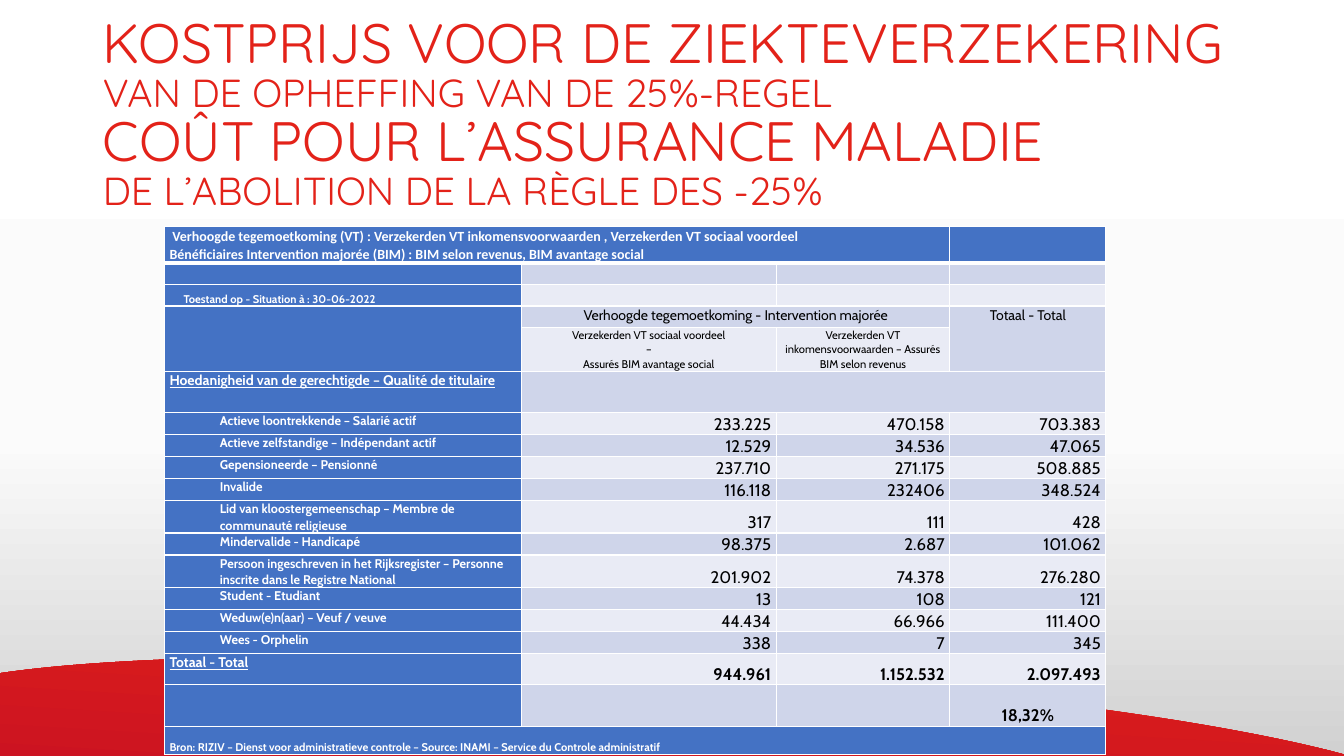
import pptx
import pptx.util
import pptx.dml.color
import pptx.enum.shapes
import pptx.enum.text
import pptx.oxml
import pptx.oxml.ns
from lxml import etree

Pt = pptx.util.Pt
qn = pptx.oxml.ns.qn
ALIGN = pptx.enum.text.PP_ALIGN
ANCHOR = pptx.enum.text.MSO_ANCHOR

HUES = {
    "red": "E32219", "wine": "BD0A26", "blue": "4472C4",
    "dark": "CFD5EA", "pale": "E9EBF5", "white": "FFFFFF",
    "mist": "FBFBFB", "grey": "D1D1D1", "black": "000000",
}

TITLE = [
    ("KOSTPRIJS VOOR DE ZIEKTEVERZEKERING", 39.6),
    ("VAN DE OPHEFFING VAN DE 25%-REGEL", 27.9),
    ("COÛT POUR L’ASSURANCE MALADIE", 39.6),
    ("DE L’ABOLITION DE LA RÈGLE DES -25%", 27.9),
]
HEAD = [
    "Verhoogde tegemoetkoming (VT) : Verzekerden VT inkomensvoorwaarden , Verzekerden VT sociaal voordeel",
    "Bénéficiaires Intervention majorée (BIM) : BIM selon revenus, BIM avantage social",
]
DATE = "Toestand op - Situation à : 30-06-2022"
GROUP = "Verhoogde tegemoetkoming - Intervention majorée"
SUM = "Totaal - Total"
SOCIAL = ["Verzekerden VT sociaal voordeel", "–", "Assurés BIM avantage social"]
INCOME = "Verzekerden VT inkomensvoorwaarden – Assurés BIM selon revenus"
STATUS = "Hoedanigheid van de gerechtigde – Qualité de titulaire"
HOLDERS = [
    ("Actieve loontrekkende – Salarié actif", "233.225", "470.158", "703.383"),
    ("Actieve zelfstandige – Indépendant actif", "12.529", "34.536", "47.065"),
    ("Gepensioneerde – Pensionné", "237.710", "271.175", "508.885"),
    ("Invalide", "116.118", "232406", "348.524"),
    ("Lid van kloostergemeenschap – Membre de communauté religieuse", "317", "111", "428"),
    ("Mindervalide - Handicapé", "98.375", "2.687", "101.062"),
    ("Persoon ingeschreven in het Rijksregister – Personne inscrite dans le Registre National",
     "201.902", "74.378", "276.280"),
    ("Student - Etudiant", "13", "108", "121"),
    ("Weduw(e)n(aar) – Veuf / veuve", "44.434", "66.966", "111.400"),
    ("Wees - Orphelin", "338", "7", "345"),
]
TOTALS = ("944.961", "1.152.532", "2.097.493")
SHARE = "18,32%"
SOURCE = "Bron: RIZIV – Dienst voor administratieve controle – Source: INAMI – Service du Controle administratif"

WIDTHS = [255, 182, 124, 111.5]
HEIGHTS = [26, 15.3, 15.3, 15.3, 31.4, 29.7] + [15.7] * 4 + [
    22.9, 15.7, 23.2, 15.7, 15.7, 15.7, 22.1, 30, 20]
SPANS = [(0, 0, 0, 2), (3, 0, 4, 0), (3, 1, 3, 2), (3, 3, 4, 3), (5, 1, 5, 3), (18, 0, 18, 3)]


def rgb(hue):
    return pptx.dml.color.RGBColor.from_string(HUES[hue])


def write(frame, lines, size=12, font="Cabin", hue="black", bold=False,
          under=False, align=ALIGN.LEFT, indent=0, space=1.07):
    lines = [lines] if isinstance(lines, str) else lines
    for i, line in enumerate(lines):
        para = frame.paragraphs[0] if i == 0 else frame.add_paragraph()
        text, high = line if isinstance(line, tuple) else (line, size)
        para.alignment = align
        para.line_spacing = space
        if indent and i == 0:
            props = para._p.get_or_add_pPr()
            props.set("marL", str(Pt(indent)))
            props.set("indent", "0")
        run = para.add_run()
        run.text = text
        face = run.font
        face.size, face.name = Pt(high), font
        face.bold, face.underline = bold, under
        face.color.rgb = rgb(hue)


def shade(fill, angle, stops):
    fill.gradient()
    fill.gradient_angle = angle
    group = fill._fill._gradFill.find(qn("a:gsLst"))
    for old in list(group):
        group.remove(old)
    for place, hue in stops:
        stop = etree.SubElement(group, qn("a:gs"), pos=str(place * 1000))
        etree.SubElement(stop, qn("a:srgbClr"), val=HUES[hue])


def edge(cell, thick):
    props = cell._tc.get_or_add_tcPr()
    for i, side in enumerate(("lnL", "lnR", "lnT", "lnB")):
        width = thick.get(side, 1)
        line = etree.Element(qn("a:" + side), w=str(Pt(width)))
        paint = etree.SubElement(line, qn("a:solidFill"))
        etree.SubElement(paint, qn("a:srgbClr"), val=HUES["white"])
        props.insert(i, line)


def put(grid, row, col, lines, low=False, **style):
    cell = grid.cell(row, col)
    cell.vertical_anchor = ANCHOR.BOTTOM if low else ANCHOR.TOP
    write(cell.text_frame, lines, **style)


def build(slide):
    back = slide.background.fill
    shade(back, 270, [(0, "white"), (58, "mist"), (100, "grey")])

    hill = slide.shapes.add_shape(pptx.enum.shapes.MSO_SHAPE.OVAL,
                                  Pt(-67.7), Pt(477.4), Pt(1095.1), Pt(124.6))
    hill.rotation = 183.5
    hill.shadow.inherit = False
    hill.line.fill.background()
    shade(hill.fill, 90, [(0, "red"), (100, "wine")])

    box = slide.shapes.add_textbox(Pt(73.5), Pt(12), Pt(820), Pt(146)).text_frame
    box.word_wrap = True
    box.margin_left = box.margin_right = box.margin_top = box.margin_bottom = 0
    write(box, TITLE, font="Quicksand", hue="red", space=0.87)

    grid = slide.shapes.add_table(len(HEIGHTS), len(WIDTHS), Pt(117.5), Pt(162),
                                  Pt(sum(WIDTHS)), Pt(sum(HEIGHTS))).table
    grid.first_row = grid.horz_banding = False
    for col, width in zip(grid.columns, WIDTHS):
        col.width = Pt(width)
    last = len(HEIGHTS) - 1
    for r, height in enumerate(HEIGHTS):
        grid.rows[r].height = Pt(height)
        for c in range(len(WIDTHS)):
            cell = grid.cell(r, c)
            cell.margin_left = cell.margin_right = Pt(3.6)
            cell.margin_top = cell.margin_bottom = 0
            cell.fill.solid()
            band = "dark" if r % 2 else "pale"
            cell.fill.fore_color.rgb = rgb("blue" if c == 0 or r in (0, last) else band)
            edge(cell, {"lnB": 3} if r == 0 else {"lnT": 3} if r == 1 else {})
    for top, left, foot, right in SPANS:
        grid.cell(top, left).merge(grid.cell(foot, right))

    label = {"hue": "white", "bold": True}
    mid = {"align": ALIGN.CENTER}
    put(grid, 0, 0, HEAD, low=True, size=10, font="Calibri", indent=2, **label)
    put(grid, 2, 0, DATE, low=True, size=8, indent=10, **label)
    put(grid, 3, 1, GROUP, size=10, **mid)
    put(grid, 3, 3, SUM, size=10, **mid)
    put(grid, 4, 1, SOCIAL, size=8, **mid)
    put(grid, 4, 2, INCOME, size=8, **mid)
    put(grid, 5, 0, STATUS, size=10, under=True, **label)
    for r, (name, *counts) in enumerate(HOLDERS, 6):
        put(grid, r, 0, name, size=9, indent=36, **label)
        for c, count in enumerate(counts, 1):
            put(grid, r, c, count, low=True, align=ALIGN.RIGHT)
    put(grid, 16, 0, SUM, size=10, under=True, **label)
    for c, count in enumerate(TOTALS, 1):
        put(grid, 16, c, count, low=True, bold=True, align=ALIGN.RIGHT)
    put(grid, 17, 3, SHARE, low=True, bold=True, **mid)
    put(grid, last, 0, SOURCE, low=True, size=8, **label)

    for cell in grid.iter_cells():
        if not cell.text_frame.text:
            para = cell.text_frame.paragraphs[0]._p
            etree.SubElement(para, qn("a:endParaRPr"), sz="800")


def main():
    deck = pptx.Presentation()
    deck.slide_width, deck.slide_height = Pt(960), Pt(540)
    build(deck.slides.add_slide(deck.slide_layouts[6]))
    deck.save("out.pptx")


if __name__ == "__main__":
    main()
